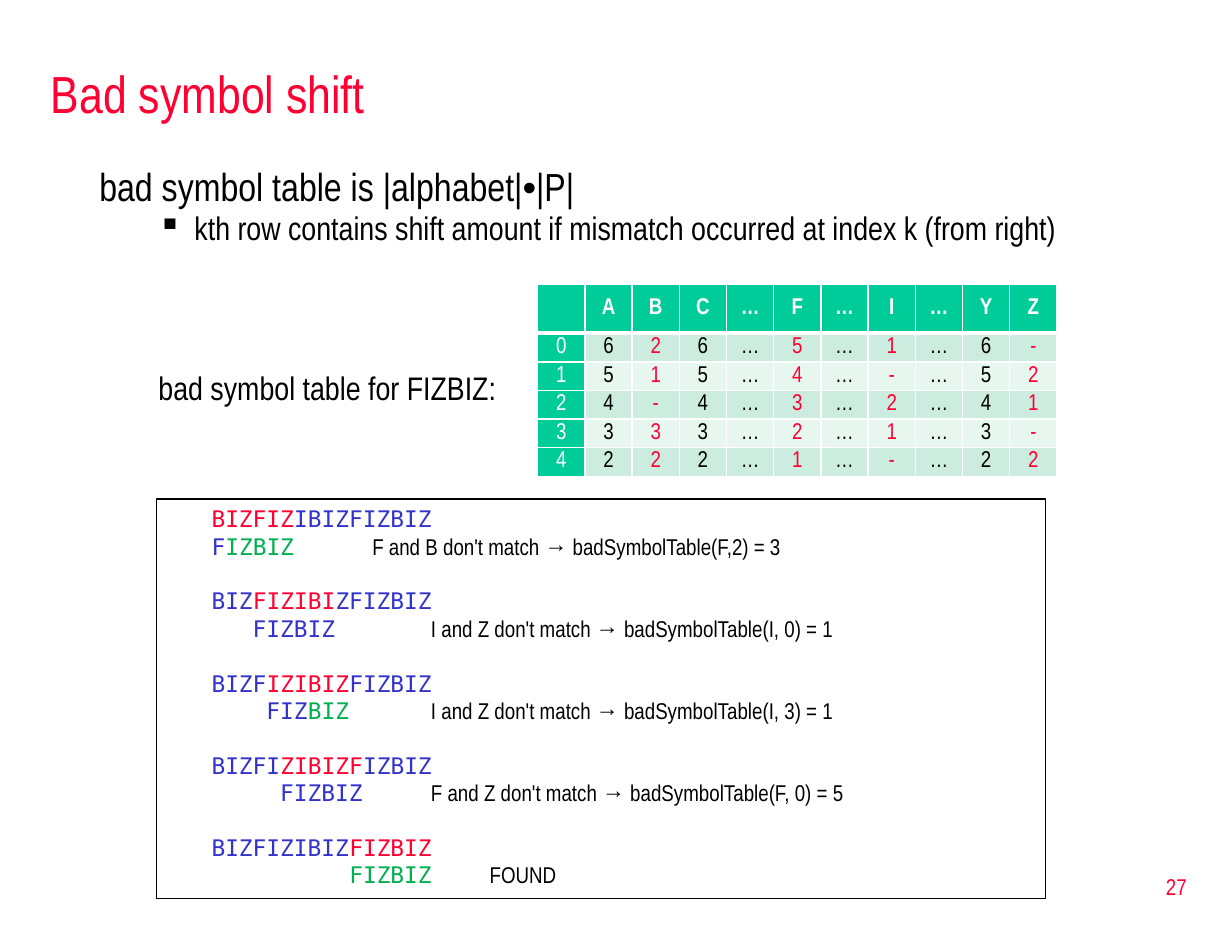
from lxml.etree import SubElement
from pptx import Presentation
from pptx.dml.color import RGBColor
from pptx.enum.shapes import MSO_SHAPE
from pptx.enum.text import MSO_ANCHOR, PP_ALIGN
from pptx.oxml import parse_xml
from pptx.oxml.ns import nsdecls, qn
from pptx.util import Cm, Pt

RED = RGBColor(0xFF, 0x00, 0x33)
BLACK = RGBColor(0x00, 0x00, 0x00)
WHITE = RGBColor(0xFF, 0xFF, 0xFF)
BLUE = RGBColor(0x33, 0x33, 0xCC)
GREEN = RGBColor(0x00, 0xB0, 0x50)
TEAL = RGBColor(0x00, 0xCC, 0x99)
BANDS = (RGBColor(0xCB, 0xEC, 0xDE), RGBColor(0xE7, 0xF6, 0xEF))

NARROW = "Arial Narrow"
MONO = "DejaVu Sans Mono"
PATTERN = "FIZBIZ"
SEARCHED = "BIZFIZIBIZFIZBIZ"
LETTERS = ["", "A", "B", "C", "…", "F", "…", "I", "…", "Y", "Z"]
SHIFTS = [
    "0 6 2 6 … 5 … 1 … 6 -",
    "1 5 1 5 … 4 … - … 5 2",
    "2 4 - 4 … 3 … 2 … 4 1",
    "3 3 3 3 … 2 … 1 … 3 -",
    "4 2 2 2 … 1 … - … 2 2",
]
STEPS = [
    (0, 5, "F and B don't match → badSymbolTable(F,2) = 3"),
    (3, 0, "I and Z don't match → badSymbolTable(I, 0) = 1"),
    (4, 3, "I and Z don't match → badSymbolTable(I, 3) = 1"),
    (5, 0, "F and Z don't match → badSymbolTable(F, 0) = 5"),
    (10, 6, "FOUND"),
]


def apply(target, values):
    for name, value in values.items():
        setattr(target, name, value)


def add_span(para, text, size, color=BLACK, font=NARROW, bold=False):
    span = para.add_run()
    span.text = text
    apply(span.font, {"name": font, "size": Pt(size), "bold": bold})
    span.font.color.rgb = color


def set_indent(para, margin, hanging):
    properties = para._p.get_or_add_pPr()
    properties.set("marL", str(margin))
    properties.set("indent", str(-hanging))
    return properties


def add_text_box(page, left, top, width, height, **frame_format):
    box = page.shapes.add_textbox(Cm(left), Cm(top), Cm(width), Cm(height))
    apply(box.text_frame, {"word_wrap": True, **frame_format})
    return box.text_frame


def add_title(page):
    title = page.shapes.title
    apply(title, {"left": Cm(0.85), "top": Cm(1.06), "width": Cm(25.2), "height": Cm(1.9)})
    title.text_frame.vertical_anchor = MSO_ANCHOR.MIDDLE
    para = title.text_frame.paragraphs[0]
    para.alignment = PP_ALIGN.LEFT
    add_span(para, "Bad symbol shift", 32, RED)


def add_body(page):
    frame = add_text_box(page, 1.9, 3.39, 24.2, 2.75)
    para = frame.paragraphs[0]
    set_indent(para, Cm(0.95), Cm(0.95))
    add_span(para, "bad symbol table is |alphabet|", 24)
    add_span(para, "•", 24, font="Arial")
    add_span(para, "|P|", 24)
    para = frame.add_paragraph()
    apply(para, {"line_spacing": 0.8, "space_before": Pt(4)})
    bullet = SubElement(set_indent(para, Cm(2.06), Cm(0.79)), qn("a:buChar"))
    bullet.set("char", "▪")
    add_span(para, "kth row contains shift amount if mismatch occurred at index k (from right)", 20)


def set_borders(cell, widths):
    properties = cell._tc.get_or_add_tcPr()
    for index, (side, width) in enumerate(widths.items()):
        properties.insert(index, parse_xml(
            f'<a:ln{side} {nsdecls("a")} w="{Pt(width)}"><a:solidFill>'
            f'<a:srgbClr val="{WHITE}"/></a:solidFill></a:ln{side}>'))


def fill_cell(cell, text, row, column):
    is_head = row == 0 or column == 0
    cell.fill.solid()
    cell.fill.fore_color.rgb = TEAL if is_head else BANDS[(row + 1) % 2]
    set_borders(cell, {"L": 1, "R": 1, "T": 3 if row == 1 else 1, "B": 3 if row == 0 else 1})
    apply(cell, {"margin_top": 0, "margin_bottom": 0, "vertical_anchor": MSO_ANCHOR.MIDDLE})
    in_pattern = LETTERS[column] in ("B", "F", "I", "Z")
    color = WHITE if is_head else RED if in_pattern else BLACK
    para = cell.text_frame.paragraphs[0]
    para.alignment = PP_ALIGN.CENTER
    add_span(para, text, 14, color, bold=row == 0)


def add_shift_table(page):
    rows = [LETTERS] + [line.split() for line in SHIFTS]
    table = page.shapes.add_table(
        len(rows), len(LETTERS), Cm(11.64), Cm(6.15), Cm(11.25), Cm(4.16)).table
    for column in table.columns:
        column.width = Cm(11.25) // len(LETTERS)
    for row, values in enumerate(rows):
        table.rows[row].height = Cm(0.62) if row else Cm(1.06)
        for column, text in enumerate(values):
            fill_cell(table.cell(row, column), text, row, column)


def add_trace(page):
    box = page.shapes.add_shape(
        MSO_SHAPE.RECTANGLE, Cm(3.39), Cm(10.8), Cm(19.25), Cm(8.64))
    box.shadow.inherit = False
    box.fill.background()
    box.line.color.rgb = BLACK
    box.line.width = Pt(0.75)
    frame = box.text_frame
    apply(frame, {"word_wrap": True, "vertical_anchor": MSO_ANCHOR.TOP})

    for shift, matched, note in STEPS:
        end = shift + len(PATTERN)
        split = len(PATTERN) - matched
        tabs = "\t" if end == len(SEARCHED) else "\t\t"
        searched_spans = [(SEARCHED[:shift], BLUE, MONO), (SEARCHED[shift:end], RED, MONO),
                          (SEARCHED[end:], BLUE, MONO)]
        pattern_spans = [(" " * shift + PATTERN[:split], BLUE, MONO),
                         (PATTERN[split:] + tabs, GREEN, MONO), (note, BLACK, NARROW)]
        for spans in (searched_spans, pattern_spans):
            is_first = shift == 0 and spans is searched_spans
            para = frame.paragraphs[0] if is_first else frame.add_paragraph()
            gap = 16.8 if shift and spans is searched_spans else 0
            apply(para, {"alignment": PP_ALIGN.LEFT, "line_spacing": Pt(16.8),
                         "space_before": Pt(gap)})
            set_indent(para, Cm(1.88), Cm(0.94))
            for text, color, font in spans:
                if text:
                    add_span(para, text, 14, color, font)


def add_label(page):
    frame = add_text_box(page, 3.18, 7.83, 8.25, 1.11)
    add_span(frame.paragraphs[0], "bad symbol table for FIZBIZ:", 20)


def add_page_number(page):
    frame = add_text_box(page, 20.37, 18.52, 5.57, 1.34, vertical_anchor=MSO_ANCHOR.MIDDLE)
    para = frame.paragraphs[0]
    para.alignment = PP_ALIGN.RIGHT
    add_span(para, "27", 14, RED)


def main():
    deck = Presentation()
    apply(deck, {"slide_width": Cm(26.67), "slide_height": Cm(20.32)})
    page = deck.slides.add_slide(deck.slide_layouts[5])
    add_title(page)
    add_body(page)
    add_page_number(page)
    add_shift_table(page)
    add_label(page)
    add_trace(page)
    deck.save("out.pptx")


if __name__ == "__main__":
    main()
